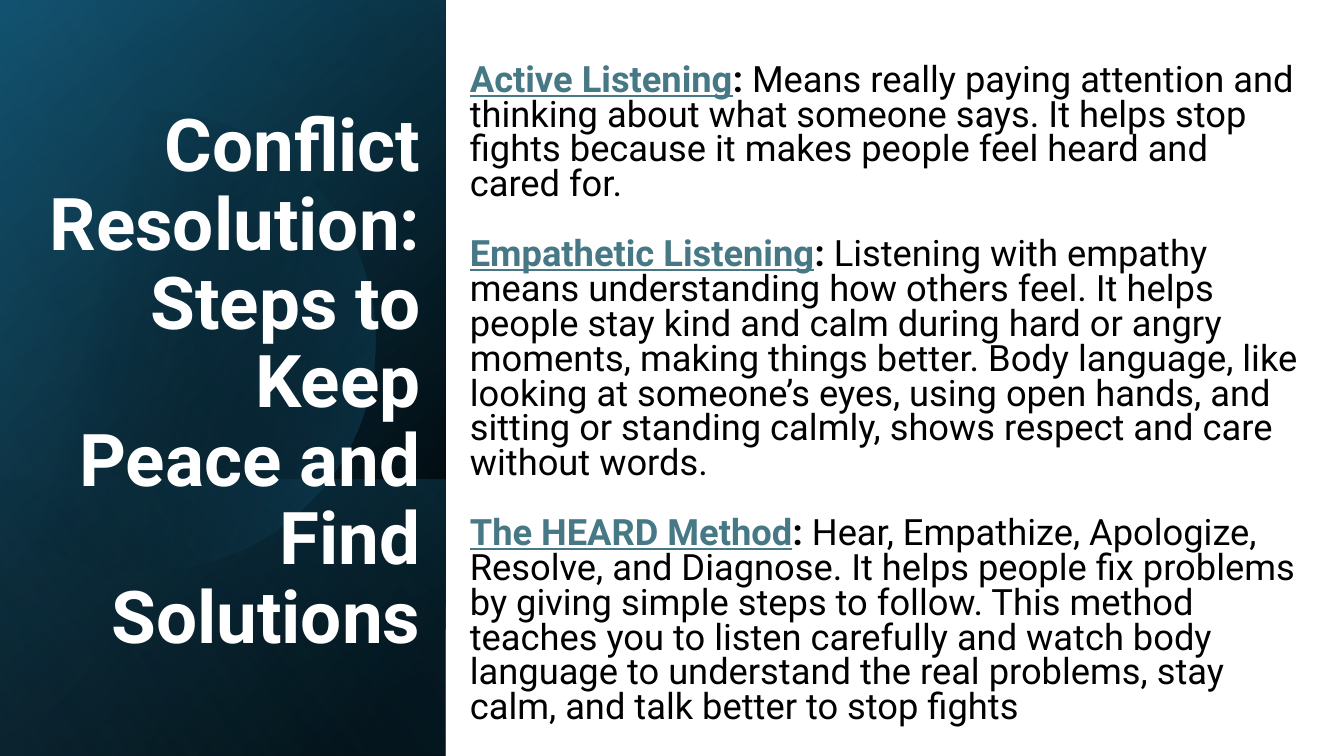
from lxml import etree
from pptx import Presentation
from pptx import util as u
from pptx.dml.color import RGBColor
from pptx.enum import shapes, text
from pptx.oxml import ns

WHITE = RGBColor(0xFF, 0xFF, 0xFF)
BLACK = RGBColor(0x00, 0x00, 0x00)
DEEP_BLUE = RGBColor(0x10, 0x48, 0x62)
TEAL = RGBColor(0x15, 0x60, 0x82)
SKY = RGBColor(0x46, 0xB1, 0xE1)
HEADING = RGBColor(0x46, 0x78, 0x86)
FONT = "Roboto"
WIDTH, HEIGHT, PANEL_WIDTH = 13.33, 7.5, 4.42

TITLE = "Conflict Resolution: Steps to Keep Peace and Find Solutions"
TOPICS = [
    ("Active Listening",
     "Means really paying attention and thinking about what someone says. It helps stop "
     "fights because it makes people feel heard and cared for."),
    ("Empathetic Listening",
     "Listening with empathy means understanding how others feel. It helps people stay kind "
     "and calm during hard or angry moments, making things better. Body language, like "
     "looking at someone’s eyes, using open hands, and sitting or standing calmly, shows "
     "respect and care without words."),
    ("The HEARD Method",
     "Hear, Empathize, Apologize, Resolve, and Diagnose. It helps people fix problems by "
     "giving simple steps to follow. This method teaches you to listen carefully and watch "
     "body language to understand the real problems, stay calm, and talk better to stop "
     "fights"),
]


def fill_gradient(shape, stops, angle):
    """Stops are (position %, colour, opacity %); the angle runs clockwise."""
    shape.shadow.inherit = False
    shape.line.fill.background()
    shape.fill.gradient()
    gradient = shape._element.spPr.find(ns.qn("a:gradFill"))
    gradient.set("rotWithShape", "1")
    for child in list(gradient):
        gradient.remove(child)
    stop_list = etree.SubElement(gradient, ns.qn("a:gsLst"))
    for position, color, opacity in stops:
        stop = etree.SubElement(stop_list, ns.qn("a:gs"), pos=str(position * 1000))
        rgb = etree.SubElement(stop, ns.qn("a:srgbClr"), val=str(color))
        etree.SubElement(rgb, ns.qn("a:alpha"), val=str(opacity * 1000))
    etree.SubElement(gradient, ns.qn("a:lin"), ang=str(angle * 60000), scaled="0")


def add_turned_panel(slide, box, stops, angle):
    """Cover the box with a mirrored rectangle turned by 90 degrees."""
    left, top, width, height = box
    shift = (width - height) / 2
    panel = slide.shapes.add_shape(
        shapes.MSO_SHAPE.RECTANGLE, u.Inches(left + shift), u.Inches(top - shift),
        u.Inches(height), u.Inches(width))
    panel.rotation = 90
    panel._element.spPr.find(ns.qn("a:xfrm")).set("flipH", "1")
    fill_gradient(panel, stops, angle)


def curve_points(start, first, second, end, steps=24):
    """Points along a cubic curve, without its start."""
    for step in range(1, steps + 1):
        t = step / steps
        weights = ((1 - t) ** 3, 3 * t * (1 - t) ** 2, 3 * t ** 2 * (1 - t), t ** 3)
        yield tuple(sum(weight * point[axis] for weight, point in
                        zip(weights, (start, first, second, end))) for axis in (0, 1))


def add_glow(slide, box):
    """Add a soft disc, cut off by the left edge of the box."""
    left, top = box[:2]
    start = (1.49, 1.1)
    curves = [((2.46, 1.12), (3.35, 1.77), (3.63, 2.75)),
              ((3.98, 3.97), (3.28, 5.23), (2.07, 5.58)),
              ((1.31, 5.8), (0.53, 5.61), (0, 5.14))]
    closing = [((0.23, 1.42), (0.5, 1.28), (0.8, 1.19)),
               ((1.03, 1.13), (1.26, 1.1), start)]
    points = [start]
    for curve in curves:
        points.extend(curve_points(points[-1], *curve))
    points.append((0, 1.61))
    for curve in closing:
        points.extend(curve_points(points[-1], *curve))
    outline = [(u.Inches(left + x), u.Inches(top + y)) for x, y in points]
    builder = slide.shapes.build_freeform(*outline[0])
    builder.add_line_segments(outline[1:], close=True)
    fill_gradient(builder.convert_to_shape(), [(29, BLACK, 0), (100, TEAL, 43)], 14)


def add_side_panel(slide, box):
    left, top, width, height = box
    corner_height = 2.74
    corner = (left, top + height - corner_height, width, corner_height)
    add_turned_panel(slide, box, [(8, BLACK, 100), (100, DEEP_BLUE, 100)], 50)
    add_turned_panel(slide, box, [(0, BLACK, 0), (99, TEAL, 46)], 30)
    add_turned_panel(slide, corner, [(2, TEAL, 29), (100, BLACK, 30)], 130)
    add_glow(slide, box)
    add_turned_panel(slide, box, [(0, BLACK, 0), (99, SKY, 11)], 120)


def add_text(paragraph, content, size, color, bold=False, underline=False):
    run = paragraph.add_run()
    run.text = content
    font = run.font
    font.name, font.size, font.bold, font.underline = FONT, u.Pt(size), bold, underline
    font.color.rgb = color


def place_frame(placeholder, box, anchor):
    placeholder.left, placeholder.top, placeholder.width, placeholder.height = map(u.Inches, box)
    frame = placeholder.text_frame
    frame.word_wrap = True
    frame.auto_size = text.MSO_AUTO_SIZE.NONE
    frame.vertical_anchor = anchor
    return frame


def write_title(slide, box):
    frame = place_frame(slide.shapes.title, box, text.MSO_ANCHOR.BOTTOM)
    paragraph = frame.paragraphs[0]
    paragraph.alignment = text.PP_ALIGN.RIGHT
    paragraph.line_spacing = 0.9
    add_text(paragraph, TITLE, size=52, color=WHITE, bold=True)


def write_topics(slide, box):
    frame = place_frame(slide.placeholders[1], box, text.MSO_ANCHOR.MIDDLE)
    for index, (heading, description) in enumerate(TOPICS):
        paragraph = frame.add_paragraph() if index else frame.paragraphs[0]
        paragraph.alignment = text.PP_ALIGN.LEFT
        paragraph.line_spacing = 0.8
        paragraph.space_before, paragraph.space_after = u.Pt(10), u.Pt(15)
        properties = paragraph._p.get_or_add_pPr()
        properties.set("marL", "0")
        properties.set("indent", "0")
        etree.SubElement(properties, ns.qn("a:buNone"))
        add_text(paragraph, heading, size=25.9, color=HEADING, bold=True, underline=True)
        add_text(paragraph, ": ", size=25.9, color=BLACK, bold=True)
        add_text(paragraph, description, size=25.9, color=BLACK)


def add_backdrop(slide, box):
    backdrop = slide.shapes.add_shape(shapes.MSO_SHAPE.RECTANGLE, *map(u.Inches, box))
    backdrop.shadow.inherit = False
    backdrop.fill.solid()
    backdrop.fill.fore_color.rgb = WHITE
    backdrop.line.fill.background()


def bring_to_front(slide, placeholders):
    for placeholder in placeholders:
        slide.shapes._spTree.append(placeholder._element)


def main():
    presentation = Presentation()
    presentation.slide_width, presentation.slide_height = u.Inches(WIDTH), u.Inches(HEIGHT)
    slide = presentation.slides.add_slide(presentation.slide_layouts[1])
    add_backdrop(slide, (0, 0, WIDTH, HEIGHT))
    add_side_panel(slide, (0, 0, PANEL_WIDTH, HEIGHT))
    write_title(slide, (0.3, 0.85, 3.97, 5.74))
    write_topics(slide, (4.56, 0.56, 8.47, 6.73))
    bring_to_front(slide, list(slide.placeholders))
    presentation.save("out.pptx")


if __name__ == "__main__":
    main()
